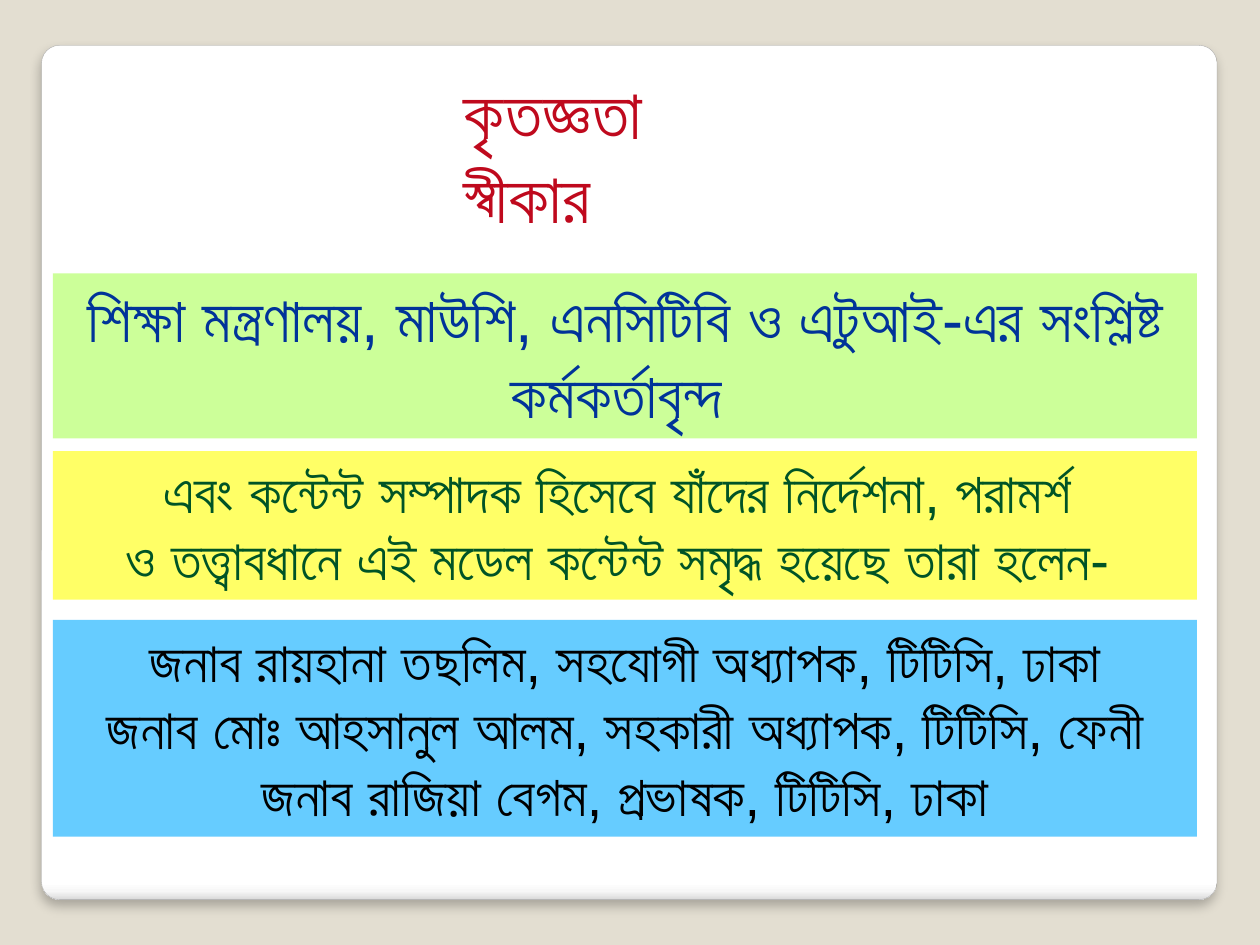
from dataclasses import dataclass

from lxml.etree import SubElement
from pptx import Presentation
from pptx.dml.color import RGBColor
from pptx.enum.shapes import MSO_SHAPE as Shape
from pptx.enum.text import MSO_ANCHOR as Anchor, MSO_AUTO_SIZE as AutoSize, PP_ALIGN as Align
from pptx.oxml import parse_xml
from pptx.oxml.ns import nsdecls, qn
from pptx.util import Inches, Pt


@dataclass(frozen=True)
class Theme:
    font: str = "Arial"
    backdrop: str = "E3DED1"
    card_line: str = "A4A4A4"
    card_stops: tuple = ((0, "FFFFFF"), (98, "FFFFFF"), (99, "F7F7F7"), (100, "DADADA"))
    title: str = "BF091D"
    title_size: int = 40
    lead_size: int = 36
    text_size: int = 32


THEME = Theme()
BAND_LEFT, BAND_WIDTH = 0.42, 9.08

# top, height, fill, text colour, text size, lines
BANDS = (
    (2.17, 1.31, "CCFF99", "003399", THEME.lead_size,
     ("শিক্ষা মন্ত্রণালয়, মাউশি, এনসিটিবি ও এটুআই-এর সংশ্লিষ্ট কর্মকর্তাবৃন্দ ",)),
    (3.58, 1.18, "FFFF66", "005426", THEME.text_size,
     ("এবং কন্টেন্ট সম্পাদক হিসেবে যাঁদের নির্দেশনা, পরামর্শ ",
      "ও তত্ত্বাবধানে এই মডেল কন্টেন্ট সমৃদ্ধ হয়েছে তারা হলেন- ")),
    (4.92, 1.72, "66CCFF", "000000", THEME.text_size,
     ("জনাব রায়হানা তছলিম, সহযোগী অধ্যাপক, টিটিসি, ঢাকা",
      "জনাব মোঃ আহসানুল আলম, সহকারী অধ্যাপক, টিটিসি, ফেনী",
      "জনাব রাজিয়া বেগম, প্রভাষক, টিটিসি, ঢাকা")),
)


def colour(code):
    return RGBColor.from_string(code)


def format_text(frame, size, code, align, bold=False, spacing=None):
    for para in frame.paragraphs:
        para.alignment = align
        for span in para.runs:
            span.font.name = THEME.font
            span.font.size = Pt(size)
            span.font.bold = bold
            span.font.color.rgb = colour(code)
            properties = span.font._element
            SubElement(properties, qn("a:cs"), typeface=THEME.font)
            if spacing:
                properties.set("spc", str(int(spacing * 100)))


def add_card(page, box):
    """Place the rounded white panel with its soft shadow behind everything else."""
    card = page.shapes.add_shape(Shape.ROUNDED_RECTANGLE, *map(Inches, box))
    card.adjustments[0] = 0.021
    card.line.color.rgb = colour(THEME.card_line)
    card.line.width = Pt(0.16)
    stops = "".join(
        f'<a:gs pos="{share * 1000}"><a:srgbClr val="{code}"/></a:gs>'
        for share, code in THEME.card_stops)
    outline = card._element.spPr.find(qn("a:ln"))
    outline.addprevious(parse_xml(
        f'<a:gradFill {nsdecls("a")}><a:gsLst>{stops}</a:gsLst>'
        '<a:lin ang="5400000" scaled="0"/></a:gradFill>'))
    outline.addnext(parse_xml(
        f'<a:effectLst {nsdecls("a")}><a:outerShdw blurRad="{Pt(6)}" dist="{Pt(4)}" '
        'dir="5400000" algn="tl" rotWithShape="0"><a:srgbClr val="000000">'
        '<a:alpha val="25000"/></a:srgbClr></a:outerShdw></a:effectLst>'))
    page.shapes._spTree.insert(2, card._element)


def place_title(page, box, words):
    title = page.shapes.title
    title.left, title.top, title.width, title.height = map(Inches, box)
    frame = title.text_frame
    frame.text = words
    frame.word_wrap = True
    frame.auto_size = AutoSize.NONE
    frame.vertical_anchor = Anchor.TOP
    format_text(frame, THEME.title_size, THEME.title, Align.LEFT, bold=True, spacing=0.5)


def add_band(page, box, fill, code, size, lines):
    band = page.shapes.add_shape(Shape.RECTANGLE, *map(Inches, box))
    band.shadow.inherit = False
    band.fill.solid()
    band.fill.fore_color.rgb = colour(fill)
    band.line.fill.background()
    frame = band.text_frame
    frame.text = "\n".join(lines)
    frame.word_wrap = True
    frame.vertical_anchor = Anchor.TOP
    format_text(frame, size, code, Align.CENTER)


def build_acknowledgements(deck):
    page = deck.slides.add_slide(deck.slide_layouts[5])
    page.background.fill.solid()
    page.background.fill.fore_color.rgb = colour(THEME.backdrop)
    add_card(page, (0.33, 0.36, 9.33, 6.78))
    place_title(page, (3.58, 0.5, 2.58, 1.46), "কৃতজ্ঞতা স্বীকার")
    for top, height, *style in BANDS:
        add_band(page, (BAND_LEFT, top, BAND_WIDTH, height), *style)


def main():
    deck = Presentation()
    deck.slide_width, deck.slide_height = Inches(10), Inches(7.5)
    build_acknowledgements(deck)
    deck.save("out.pptx")


if __name__ == "__main__":
    main()
